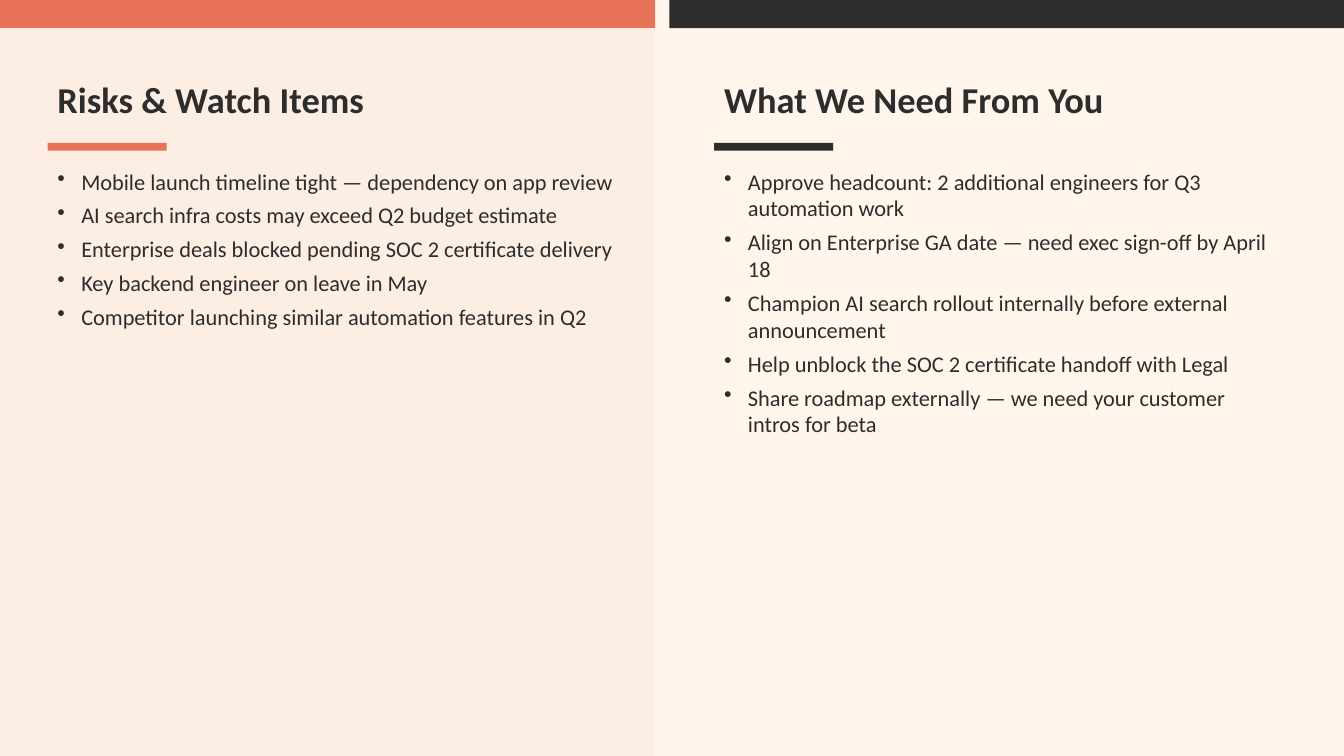
import pptx
import pptx.dml.color
import pptx.enum.shapes
import pptx.enum.text
import pptx.util
from lxml import etree
from pptx.util import Cm

CORAL = pptx.dml.color.RGBColor(0xE8, 0x72, 0x5A)
CHARCOAL = pptx.dml.color.RGBColor(0x2D, 0x2D, 0x2D)
BLUSH = pptx.dml.color.RGBColor(0xFD, 0xEE, 0xE4)
CREAM = pptx.dml.color.RGBColor(0xFF, 0xF5, 0xEB)

SLIDE_WIDTH, SLIDE_HEIGHT = Cm(33.87), Cm(19.05)
BAND_HEIGHT = Cm(0.71)

RISKS = [
    "Mobile launch timeline tight — dependency on app review",
    "AI search infra costs may exceed Q2 budget estimate",
    "Enterprise deals blocked pending SOC 2 certificate delivery",
    "Key backend engineer on leave in May",
    "Competitor launching similar automation features in Q2",
]
REQUESTS = [
    "Approve headcount: 2 additional engineers for Q3 automation work",
    "Align on Enterprise GA date — need exec sign-off by April 18",
    "Champion AI search rollout internally before external announcement",
    "Help unblock the SOC 2 certificate handoff with Legal",
    "Share roadmap externally — we need your customer intros for beta",
]


def add_rectangle(slide, left, top, width, height, color):
    """Draw a flat rectangle without outline or shadow."""
    shape = slide.shapes.add_shape(
        pptx.enum.shapes.MSO_SHAPE.RECTANGLE, left, top, width, height)
    shape.shadow.inherit = False
    shape.fill.solid()
    shape.fill.fore_color.rgb = color
    shape.line.fill.background()


def add_bullet(paragraph):
    """Give a paragraph a round bullet with a hanging indent."""
    properties = paragraph._p.get_or_add_pPr()
    properties.set("marL", str(Cm(0.6)))
    properties.set("indent", str(-Cm(0.6)))
    etree.SubElement(properties, pptx.oxml.ns.qn("a:buChar"), char="•")


def add_text(slide, left, top, width, height, lines, *, size, bold=False,
             bulleted=False, space_before=0,
             anchor=pptx.enum.text.MSO_ANCHOR.TOP):
    """Place a wrapped text box with one paragraph for each line."""
    frame = slide.shapes.add_textbox(left, top, width, height).text_frame
    frame.word_wrap = True
    frame.vertical_anchor = anchor
    for index, line in enumerate(lines):
        paragraph = frame.add_paragraph() if index else frame.paragraphs[0]
        paragraph.space_before = pptx.util.Pt(space_before)
        if bulleted:
            add_bullet(paragraph)
        run = paragraph.add_run()
        run.text = line
        run.font.name = "Calibri"
        run.font.size = pptx.util.Pt(size)
        run.font.bold = bold
        run.font.color.rgb = CHARCOAL


def add_column(slide, left, top, title, items, accent):
    """Place a heading, its accent rule and a bullet list in one column."""
    add_text(slide, left, top, Cm(14), Cm(2), [title], size=26, bold=True,
             anchor=pptx.enum.text.MSO_ANCHOR.MIDDLE)
    add_rectangle(slide, left, top + Cm(2.1), Cm(3), Cm(0.2), accent)
    add_text(slide, left, top + Cm(2.6), Cm(14.5), Cm(12), items, size=16,
             bulleted=True, space_before=5)


def add_backdrop(slide):
    """Draw the two header bands and the tinted left half."""
    left_width, right_start = Cm(16.51), Cm(16.87)
    add_rectangle(slide, 0, 0, left_width, BAND_HEIGHT, CORAL)
    add_rectangle(slide, right_start, 0, SLIDE_WIDTH - right_start,
                  BAND_HEIGHT, CHARCOAL)
    add_rectangle(slide, 0, BAND_HEIGHT, left_width,
                  SLIDE_HEIGHT - BAND_HEIGHT, BLUSH)


def main():
    """Build the slide and save it."""
    presentation = pptx.Presentation()
    presentation.slide_width = SLIDE_WIDTH
    presentation.slide_height = SLIDE_HEIGHT
    slide = presentation.slides.add_slide(presentation.slide_layouts[6])
    slide.background.fill.solid()
    slide.background.fill.fore_color.rgb = CREAM
    add_backdrop(slide)
    add_column(slide, Cm(1.2), Cm(1.5), "Risks & Watch Items", RISKS, CORAL)
    add_column(slide, Cm(18), Cm(1.5), "What We Need From You", REQUESTS,
               CHARCOAL)
    presentation.save("out.pptx")


if __name__ == "__main__":
    main()
